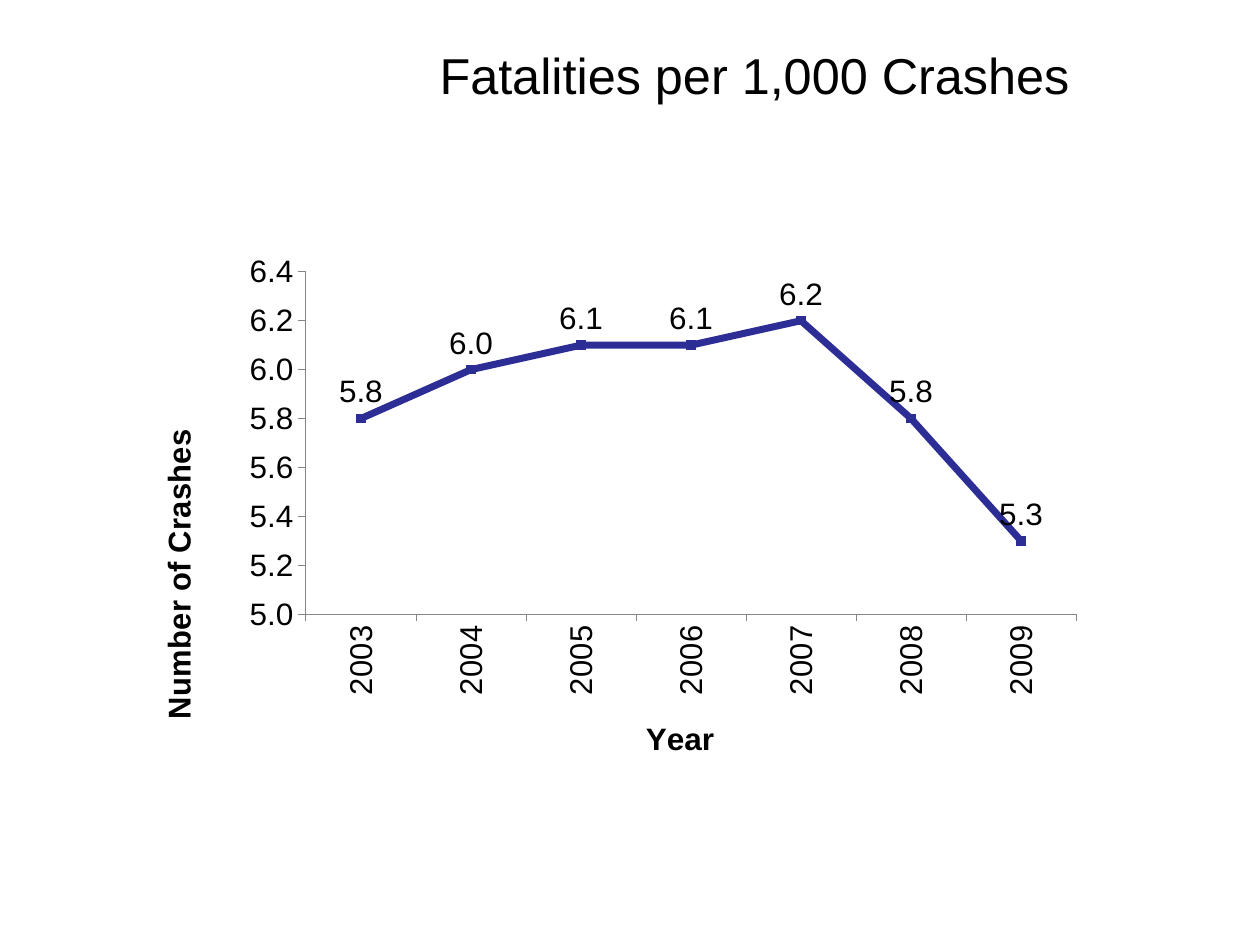
from lxml.etree import SubElement
from pptx import Presentation
from pptx.chart.data import CategoryChartData
from pptx.dml.color import RGBColor
from pptx.enum.chart import XL_CHART_TYPE, XL_LABEL_POSITION, XL_MARKER_STYLE, XL_TICK_MARK
from pptx.enum.text import MSO_ANCHOR, PP_ALIGN
from pptx.oxml.ns import qn
from pptx.util import Inches, Pt

BLACK = RGBColor(0x00, 0x00, 0x00)
GRAY = RGBColor(0x86, 0x86, 0x86)
NAVY = RGBColor(0x2D, 0x2D, 0x96)

YEARS = ["2003", "2004", "2005", "2006", "2007", "2008", "2009"]
RATES = [5.8, 6.0, 6.1, 6.1, 6.2, 5.8, 5.3]


def set_layout(element, successor_tags, x, y, w=None, h=None):
    """Place a chart part by fractions of the chart area."""
    for old in element.findall(qn("c:layout")):
        element.remove(old)
    layout = element.makeelement(qn("c:layout"), {})
    manual = SubElement(layout, qn("c:manualLayout"))
    if w is not None:
        SubElement(manual, qn("c:layoutTarget"), val="inner")
    for tag in ("xMode", "yMode"):
        SubElement(manual, qn(f"c:{tag}"), val="edge")
    for tag, value in (("x", x), ("y", y), ("w", w), ("h", h)):
        if value is not None:
            SubElement(manual, qn(f"c:{tag}"), val=str(value))
    element.insert_element_before(layout, *successor_tags)


class SlideBuilder:
    def __init__(self, slide, font="Arial", color=BLACK):
        self.slide = slide
        self.font = font
        self.color = color

    def style(self, font, size, bold=False):
        font.name = self.font
        font.size = Pt(size)
        font.bold = bold
        font.color.rgb = self.color

    def title(self, text, left, top, width, height):
        sp = self.slide.shapes.add_textbox(
            Inches(left), Inches(top), Inches(width), Inches(height))
        tf = sp.text_frame
        tf.word_wrap = True
        tf.vertical_anchor = MSO_ANCHOR.TOP
        tf.margin_top = Inches(0.02)
        tf.margin_right = Inches(0.21)
        p = tf.paragraphs[0]
        p.text = text
        p.alignment = PP_ALIGN.CENTER
        self.style(p.font, 28.8)

    def axis(self, axis, title, x, y):
        axis.has_major_gridlines = False
        axis.major_tick_mark = XL_TICK_MARK.OUTSIDE
        axis.minor_tick_mark = XL_TICK_MARK.NONE
        axis.format.line.color.rgb = GRAY
        axis.format.line.width = Pt(0.5)
        self.style(axis.tick_labels.font, 18)
        tf = axis.axis_title.text_frame
        tf.text = title
        self.style(tf.paragraphs[0].font, 18, bold=True)
        set_layout(axis.axis_title._element,
                   ("c:overlay", "c:spPr", "c:txPr"), x, y)

    def line_chart(self, name, categories, values, left, top, width, height):
        data = CategoryChartData(number_format="0.0")
        data.categories = categories
        data.add_series(name, values)
        chart = self.slide.shapes.add_chart(
            XL_CHART_TYPE.LINE_MARKERS, Inches(left), Inches(top),
            Inches(width), Inches(height), data).chart
        chart.has_legend = False
        chart.has_title = False
        self.style(chart.font, 18)

        plot = chart.plots[0]
        plot.vary_by_categories = False
        series = plot.series[0]
        series.smooth = False
        series.format.line.color.rgb = NAVY
        series.format.line.width = Pt(4)
        series.marker.style = XL_MARKER_STYLE.SQUARE
        series.marker.size = 5
        series.marker.format.fill.solid()
        series.marker.format.fill.fore_color.rgb = NAVY
        series.marker.format.line.color.rgb = NAVY

        labels = series.data_labels
        labels.show_value = True
        labels.position = XL_LABEL_POSITION.ABOVE
        labels.number_format = "0.0"
        labels.number_format_is_linked = False
        self.style(labels.font, 18)
        return chart


def main():
    prs = Presentation()
    prs.slide_width = Inches(10)
    prs.slide_height = Inches(7.5)
    s = SlideBuilder(prs.slides.add_slide(prs.slide_layouts[6]))

    s.title("Fatalities per 1,000 Crashes", 3.17, 0.33, 5.75, 1.17)
    chart = s.line_chart("Series 1", YEARS, RATES, 1.17, 1.75, 7.67, 4.33)

    years = chart.category_axis
    s.axis(years, "Year", 0.51, 0.92)
    text_props = years._element.find(qn("c:txPr"))
    text_props.find(qn("a:bodyPr")).set("rot", "-5400000")

    rates = chart.value_axis
    s.axis(rates, "Number of Crashes", 0.005, 0.39)
    rates.minimum_scale = 5
    rates.maximum_scale = 6.4
    rates.major_unit = 0.2
    rates.tick_labels.number_format = "0.0"
    rates.tick_labels.number_format_is_linked = False

    plot_area = chart._chartSpace.chart.plotArea
    set_layout(plot_area, ("c:lineChart",), 0.164, 0.096, 0.797, 0.64)
    prs.save("out.pptx")


if __name__ == "__main__":
    main()
